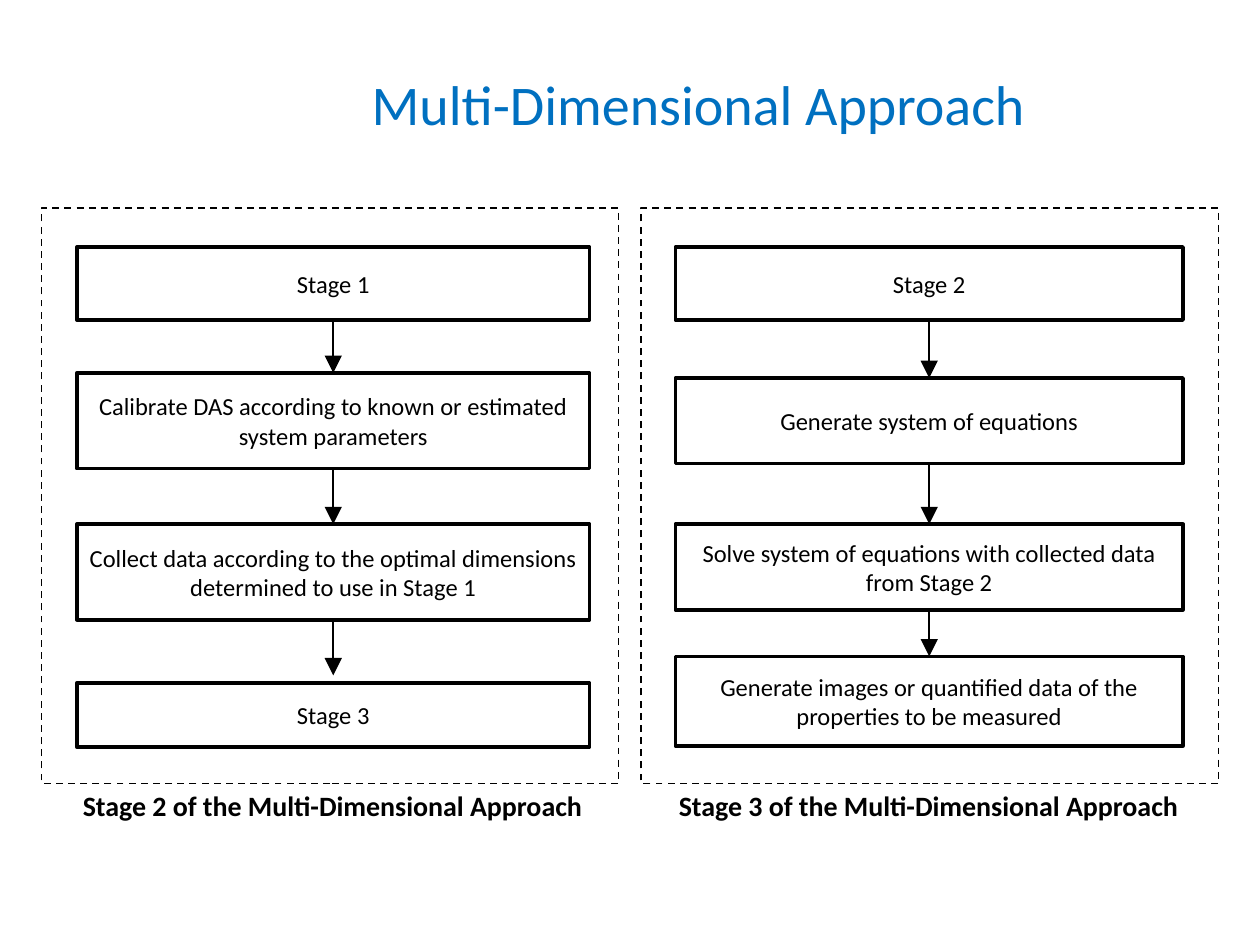
from lxml import etree
from pptx import Presentation
from pptx.dml.color import RGBColor
from pptx.enum import dml, shapes, text
from pptx.oxml import ns
from pptx.util import Inches, Pt

BLACK = RGBColor(0x00, 0x00, 0x00)
BLUE = RGBColor(0x00, 0x70, 0xC0)
BOTTOM, TOP = 2, 0


class FlowSlide:
    font = "Calibri"
    step_size, caption_size, title_size = Pt(14), Pt(16), Pt(32)

    def __init__(self, slide):
        self.shapes = slide.shapes

    def set_words(self, frame, words, size, color=BLACK, bold=None,
                  align=text.PP_ALIGN.CENTER):
        frame.text = words
        paragraph = frame.paragraphs[0]
        paragraph.alignment = align
        font = paragraph.runs[0].font
        font.name, font.size, font.bold = self.font, size, bold
        font.color.rgb = color

    def rectangle(self, left, top, width, height, weight):
        box = self.shapes.add_shape(shapes.MSO_SHAPE.RECTANGLE, Inches(left),
                                    Inches(top), Inches(width), Inches(height))
        box.shadow.inherit = False
        box.fill.background()
        box.line.color.rgb = BLACK
        box.line.width = Pt(weight)
        return box

    def step(self, left, top, width, height, words):
        box = self.rectangle(left, top, width, height, 2)
        box.text_frame.word_wrap = True
        box.text_frame.vertical_anchor = text.MSO_ANCHOR.MIDDLE
        self.set_words(box.text_frame, words, self.step_size)
        return box

    def stage_frame(self, left, top, width, height):
        frame = self.rectangle(left, top, width, height, 1)
        frame.line.dash_style = dml.MSO_LINE.DASH

    def arrow(self, upper, lower, gap=0):
        """Link two steps; a gap in inches stops the head short of the lower one."""
        x = upper.left + upper.width // 2
        link = self.shapes.add_connector(
            shapes.MSO_CONNECTOR.STRAIGHT, x, upper.top + upper.height,
            x, lower.top - Inches(gap))
        link.begin_connect(upper, BOTTOM)
        if not gap:
            link.end_connect(lower, TOP)
        link.line.color.rgb = BLACK
        link.line.width = Pt(1.25)
        properties = link._element.spPr
        etree.SubElement(properties.get_or_add_ln(), ns.qn("a:tailEnd"),
                         type="triangle", w="lg", len="lg")
        etree.SubElement(properties, ns.qn("a:effectLst"))

    def label(self, left, top, width, height, words, size, **style):
        box = self.shapes.add_textbox(Inches(left), Inches(top),
                                      Inches(width), Inches(height))
        box.text_frame.word_wrap = False
        box.text_frame.auto_size = text.MSO_AUTO_SIZE.SHAPE_TO_FIT_TEXT
        self.set_words(box.text_frame, words, size, **style)

    def flow(self, left, width, steps, last_gap=0):
        boxes = [self.step(left, top, width, height, words)
                 for top, height, words in steps]
        pairs = list(zip(boxes, boxes[1:]))
        for upper, lower in pairs[:-1]:
            self.arrow(upper, lower)
        self.arrow(*pairs[-1], gap=last_gap)


STAGE_2_STEPS = [
    (1.96, 0.58, "Stage 1"),
    (2.96, 0.76, "Calibrate DAS according to known or estimated system parameters"),
    (4.16, 0.76, "Collect data according to the optimal dimensions "
                 "determined to use in Stage 1"),
    (5.42, 0.51, "Stage 3"),
]
STAGE_3_STEPS = [
    (1.96, 0.58, "Stage 2"),
    (3.0, 0.68, "Generate system of equations"),
    (4.16, 0.68, "Solve system of equations with collected data from Stage 2"),
    (5.21, 0.71, "Generate images or quantified data of the "
                 "properties to be measured"),
]


def main():
    deck = Presentation()
    deck.slide_width, deck.slide_height = Inches(10), Inches(7.5)
    page = FlowSlide(deck.slides.add_slide(deck.slide_layouts[6]))

    page.flow(0.61, 4.07, STAGE_2_STEPS, last_gap=0.06)
    page.flow(5.36, 4.03, STAGE_3_STEPS)
    for stage, frame_left, caption_left in ((2, 0.33, 0.53), (3, 5.09, 5.26)):
        page.label(caption_left, 6.21, 4.22, 0.37,
                   f"Stage {stage} of the Multi-Dimensional Approach",
                   page.caption_size, bold=True)
        page.stage_frame(frame_left, 1.65, 4.58, 4.57)
    page.label(2.85, 0.5, 5.45, 0.64, "Multi-Dimensional Approach",
               page.title_size, color=BLUE, align=text.PP_ALIGN.LEFT)

    deck.save("out.pptx")


if __name__ == "__main__":
    main()
